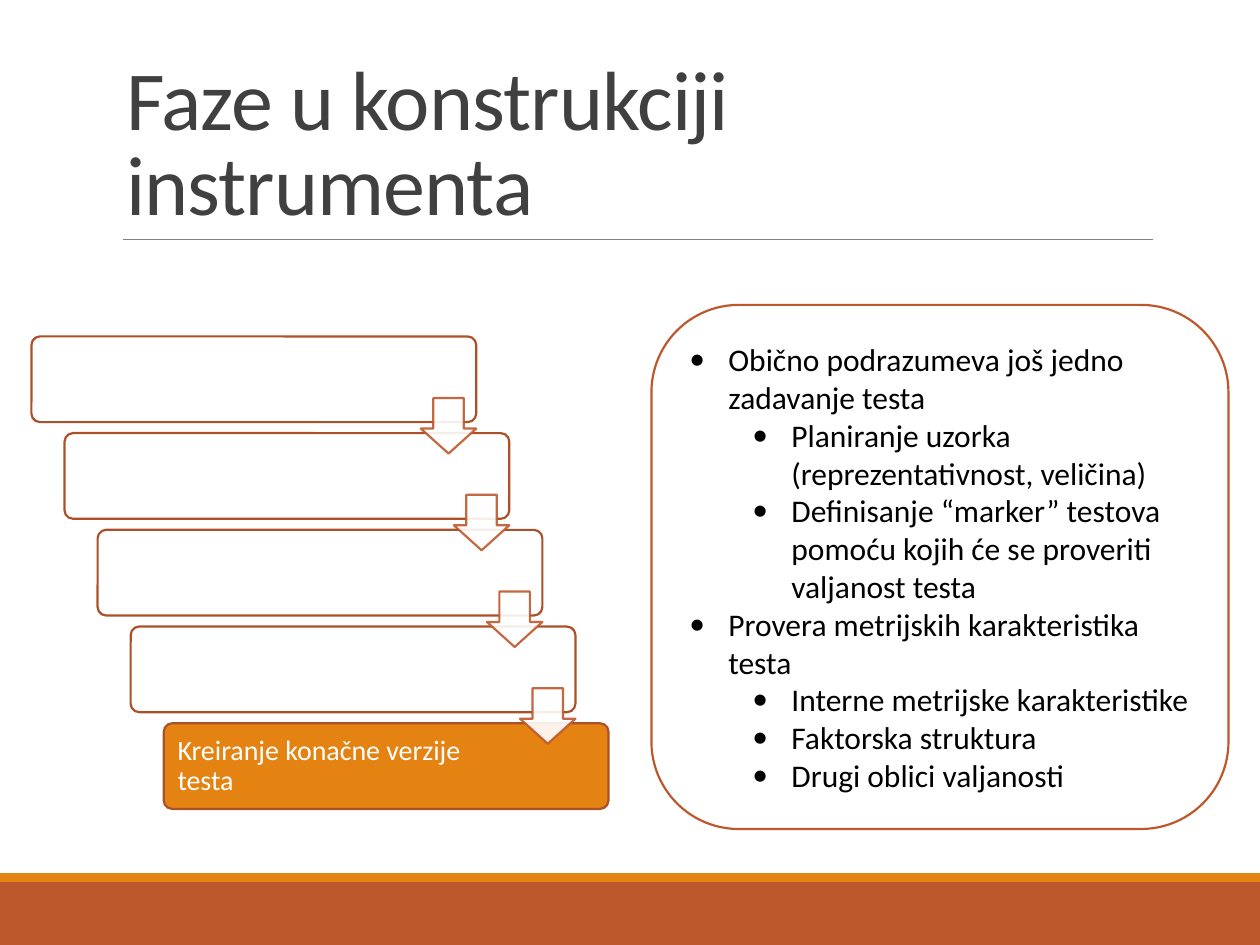
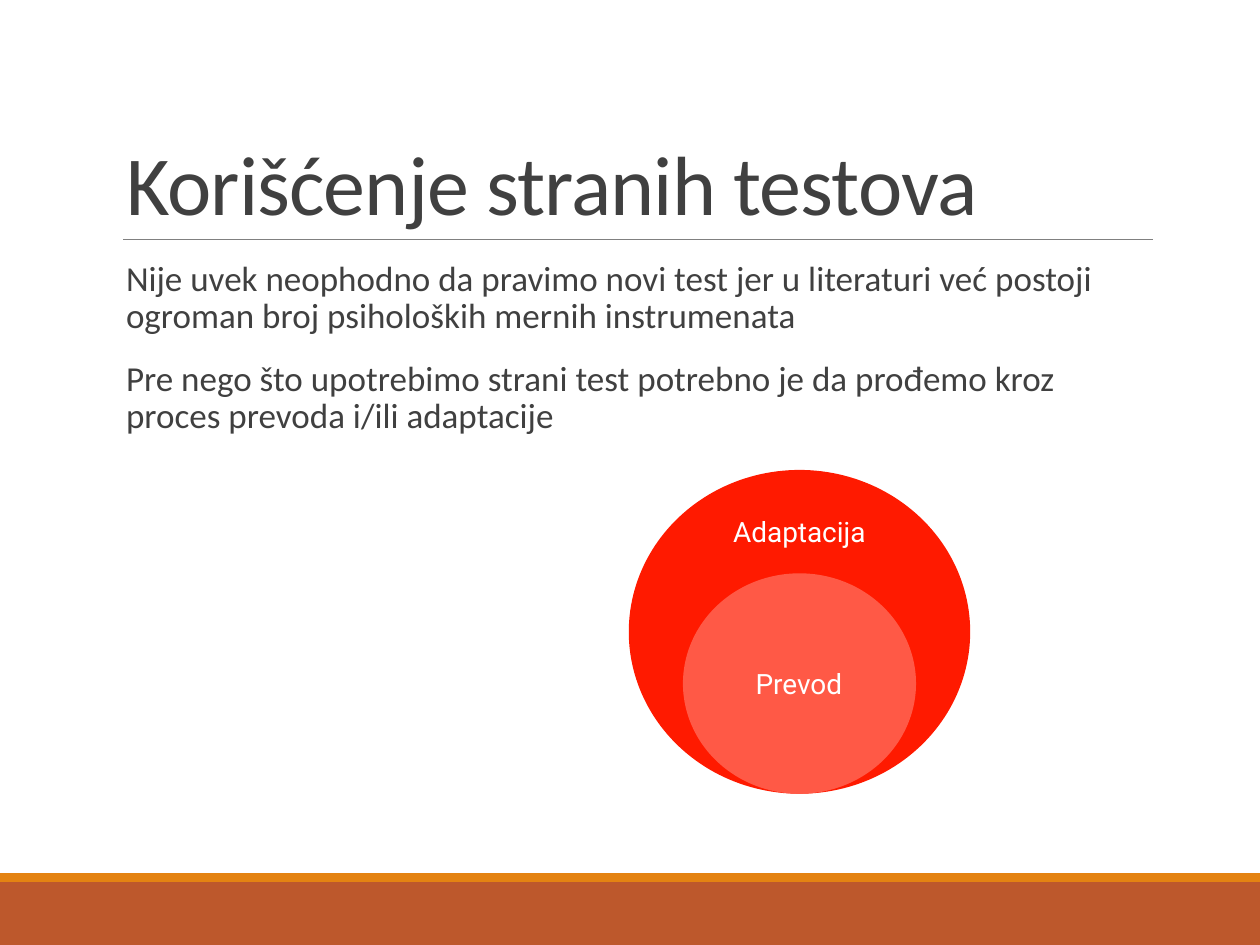
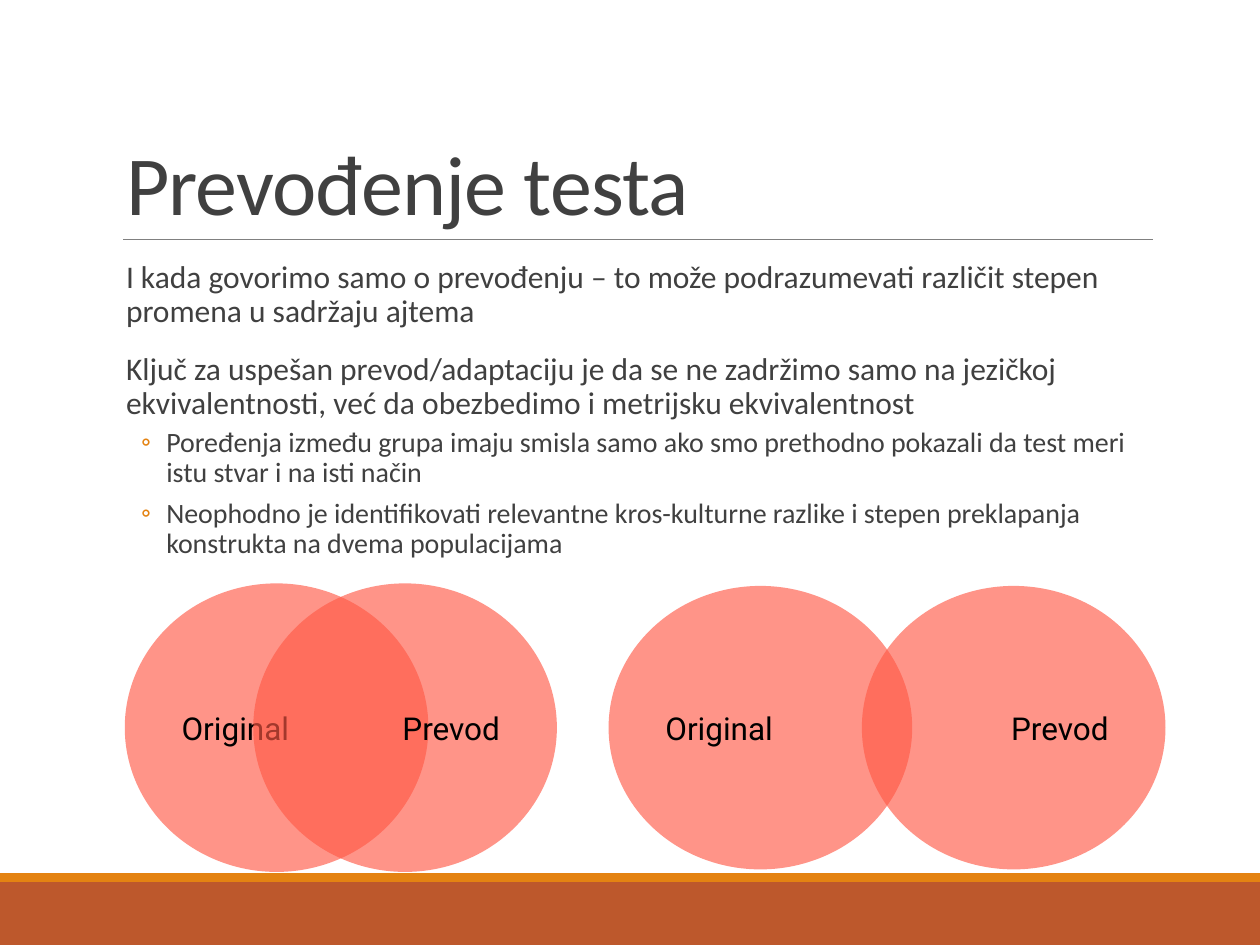
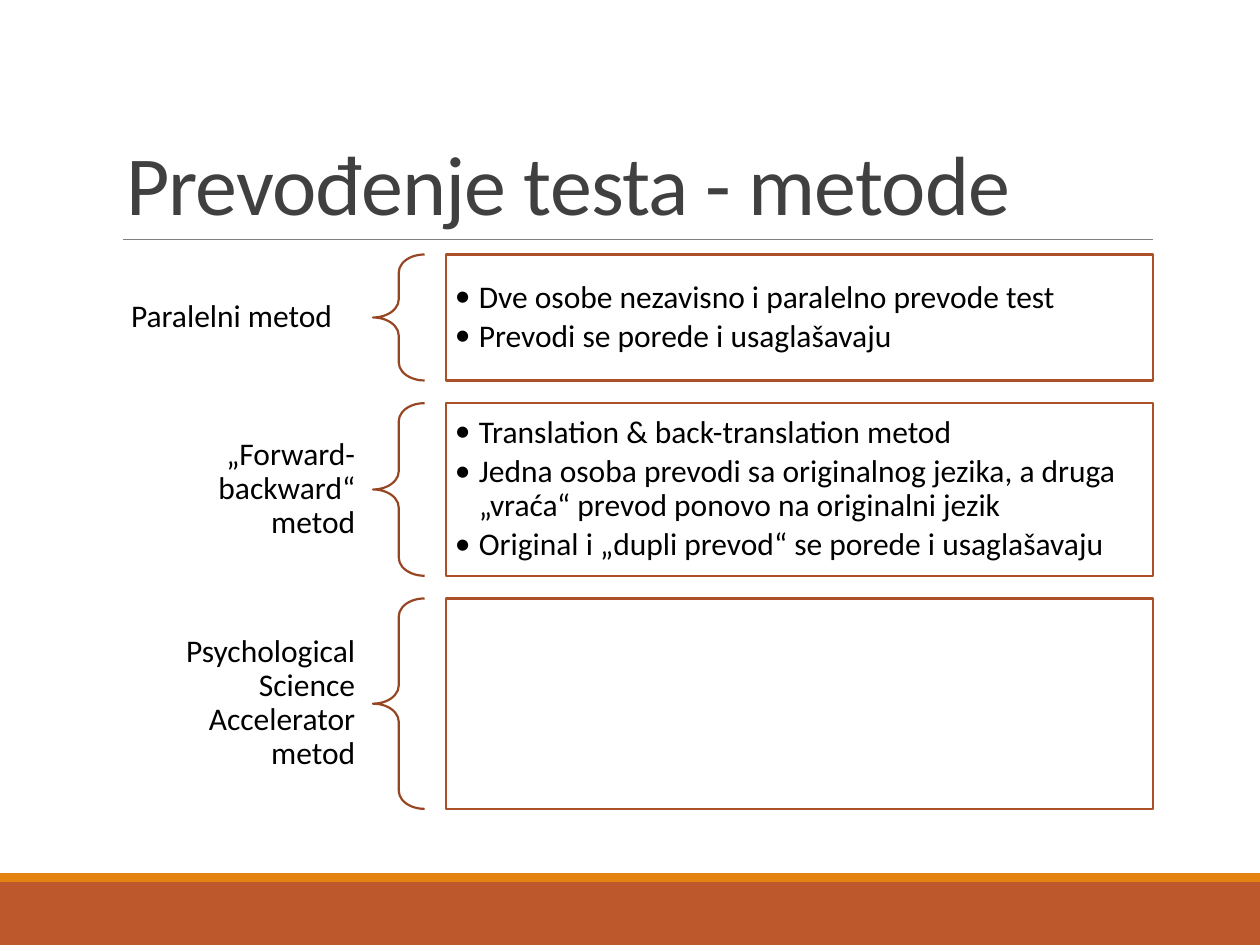
from collections import namedtuple
from dataclasses import dataclass, replace

from lxml.etree import SubElement
from pptx import Presentation
from pptx.dml.color import RGBColor
from pptx.enum.shapes import MSO_CONNECTOR as Link, MSO_SHAPE as Kind
from pptx.enum.text import MSO_ANCHOR as Anchor, MSO_AUTO_SIZE as Fit, PP_ALIGN as Align
from pptx.oxml.ns import qn
from pptx.util import Inches, Pt

COL = ROW = Inches(0.1)
WIDE, HIGH = 100, 75
HUES = {
    "rust": "BD582C",
    "orange": "E48312",
    "edge": "AC5028",
    "brace": "974623",
    "rule": "808080",
    "ink": "404040",
    "black": "000000",
    "white": "FFFFFF",
    "red": "FF1A00",
    "coral": "FF5946",
}
Box = namedtuple("Box", "x y w h")
HEAD = Box(9, 3.1, 82.5, 15.9)
BODY = Box(9, 20.2, 82.5, 44)


@dataclass
class Style:
    size: float
    color: str = "black"
    font: str = "Calibri"
    align: Align = Align.LEFT
    depth: int = 0
    left: float = 0
    hang: float = 0
    mark: str = ""
    tint: str = "black"
    lead: float = 1
    above: float = 0
    below: float = 0
    track: int = 0


TITLE = Style(48, "ink", lead=0.85, track=-50)
LEAD = Style(20, "ink", left=1, lead=0.9, above=12, below=2)
TEXT = replace(LEAD, size=18)
SUB = Style(16, "ink", depth=1, left=4.2, hang=2, mark="◦", tint="orange",
            lead=0.9, above=2, below=4)
STEP = Style(16, "white", lead=0.9)
POINT = Style(18, left=3.1, hang=3.1, mark="•")
DETAIL = replace(POINT, depth=1, left=8.1)
ITEM = Style(18, left=1.9, hang=1.9, mark="•", lead=0.9, below=3)
NAME = Style(18, align=Align.RIGHT, lead=0.9)
RING = Style(16, "white", "Roboto", Align.CENTER)
VENN = Style(18, font="Roboto")


def rgb(hue):
    return RGBColor.from_string(HUES[hue])


def emu(box):
    return (round(box.x * COL), round(box.y * ROW),
            round(box.w * COL), round(box.h * ROW))


def move(item, box):
    item.left, item.top, item.width, item.height = emu(box)


def dress(para, style):
    para.alignment = style.align
    para.level = style.depth
    para.line_spacing = style.lead
    para.space_before = Pt(style.above)
    para.space_after = Pt(style.below)
    props = para._p.get_or_add_pPr()
    props.set("marL", str(round(style.left * COL)))
    props.set("indent", str(round(-style.hang * COL)))
    if style.mark:
        color = SubElement(props, qn("a:buClr"))
        SubElement(color, qn("a:srgbClr"), val=HUES[style.tint])
        SubElement(props, qn("a:buFont"), typeface=style.font)
        SubElement(props, qn("a:buChar"), char=style.mark)
    else:
        SubElement(props, qn("a:buNone"))
    for run in para.runs:
        run.font.size = Pt(style.size)
        run.font.name = style.font
        run.font.color.rgb = rgb(style.color)
        if style.track:
            run.font._element.set("spc", str(style.track))


def write(item, lines, anchor=Anchor.MIDDLE, pads=(1, 0.5, 1, 0.5)):
    frame = item.text_frame
    frame.text = "\n".join(text for _, text in lines)
    frame.word_wrap = True
    frame.auto_size = Fit.NONE
    frame.vertical_anchor = anchor
    frame.margin_left, frame.margin_top, frame.margin_right, frame.margin_bottom = (
        round(pad * COL) for pad in pads)
    for para, (style, _) in zip(frame.paragraphs, lines):
        dress(para, style)


def label(slide, box, text, style, pads):
    write(slide.shapes.add_textbox(*emu(box)), [(style, text)], pads=pads)


def draw(slide, kind, box, fill=None, line=None, bends=(), alpha=100):
    shape = slide.shapes.add_shape(kind, *emu(box))
    shape.shadow.inherit = False
    if fill:
        shape.fill.solid()
        shape.fill.fore_color.rgb = rgb(fill)
    else:
        shape.fill.background()
    if line:
        shape.line.color.rgb = rgb(line)
        shape.line.width = Pt(1.25)
    else:
        shape.line.fill.background()
    for spot, bend in enumerate(bends):
        shape.adjustments[spot] = bend
    if alpha < 100:
        for color in shape.element.spPr.iter(qn("a:srgbClr")):
            SubElement(color, qn("a:alpha"), val=str(alpha * 1000))
    return shape


def frame_up(slide, layout):
    for holder in list(layout.placeholders)[2:]:
        holder.element.getparent().remove(holder.element)
    foot = draw(slide, Kind.RECTANGLE, Box(0, 70, WIDE, 5), "rust")
    band = draw(slide, Kind.RECTANGLE, Box(0, 69.3, WIDE, 0.7), "orange")
    rule = slide.shapes.add_connector(
        Link.STRAIGHT, round(9.8 * COL), 19 * ROW, round(91.5 * COL), 19 * ROW)
    rule.line.color.rgb = rgb("rule")
    rule.line.width = Pt(0.5)
    SubElement(rule.element.spPr, qn("a:effectLst"))
    for part in (foot, band, rule):
        layout.shapes.element.append(part.element)


def start(deck, title, lines=()):
    slide = deck.slides.add_slide(deck.slide_layouts[1])
    head, body = slide.placeholders
    move(head, HEAD)
    write(head, [(TITLE, title)], Anchor.BOTTOM)
    if lines:
        move(body, BODY)
        write(body, lines, Anchor.TOP, (0, 0.5, 0, 0.5))
    else:
        body.element.getparent().remove(body.element)
    return slide


def stairs(slide, box, texts):
    wide, high, tip = 35.3, 6.8, 4.4
    count = len(texts)
    across = (box.w - wide) / (count - 1)
    down = (box.h - high) / (count - 1)
    cells = [Box(box.x + i * across, box.y + i * down, wide, high)
             for i in range(count)]
    for cell, text in zip(cells, texts):
        step = draw(slide, Kind.ROUNDED_RECTANGLE, cell,
                    "orange" if text else "white", "edge", [0.1])
        if text:
            write(step, [(STEP, text)], pads=(0.9, 0.7, 8.1, 0.7))
    for cell in cells[:-1]:
        spot = Box(cell.x + wide - tip, cell.y + 4.9, tip, tip)
        draw(slide, Kind.DOWN_ARROW, spot, "white", "rust", [0.55, 0.45], 90)


def panel(slide, box, lines):
    card = draw(slide, Kind.ROUNDED_RECTANGLE, box, "white", "rust")
    write(card, lines)


def nest(slide, box):
    wide, high = 18.5, 17.5
    inner = Box(box.x + (box.w - wide) / 2, box.y + box.h - high, wide, high)
    rings = [
        ("Adaptacija", "red", box, Box(box.x + 6.9, box.y + 1.9, 13.3, 5.9)),
        ("Prevod", "coral", inner, Box(inner.x + 3, inner.y + 6.6, 12.4, 4.3)),
    ]
    for text, fill, ring, spot in rings:
        draw(slide, Kind.OVAL, ring, fill)
        label(slide, spot, text, RING, (1, 1, 1, 1))


def pair(slide, box):
    wide = 24.1
    sides = [("Original", box.x, Align.LEFT),
             ("Prevod", box.x + box.w - wide, Align.RIGHT)]
    for text, left, align in sides:
        disc = draw(slide, Kind.OVAL, Box(left, box.y, wide, box.h), "coral", alpha=64)
        write(disc, [(replace(VENN, align=align), text)], pads=(1, 0, 1, 0))


def method(slide, box, name, tall, align, items):
    spot = Box(box.x, box.y + (box.h - tall) / 2, 20.6, tall)
    label(slide, spot, name, replace(NAME, align=align), (1.4, 0.5, 1.4, 0.5))
    draw(slide, Kind.LEFT_BRACE, Box(box.x + 20.6, box.y, 4.1, box.h),
         line="brace", bends=[0.35, 0.5])
    card = draw(slide, Kind.RECTANGLE, Box(box.x + 26.4, box.y, box.w - 26.4, box.h),
                "white", "edge")
    if items:
        write(card, [(ITEM, item) for item in items], pads=(0.7, 0.7, 0.7, 0.7))


def phases(deck):
    slide = start(deck, "Faze u konstrukciji instrumenta")
    frame_up(slide, deck.slide_layouts[1])
    stairs(slide, Box(2.5, 26.7, 45.8, 37.5),
           ["", "", "", "", "Kreiranje konačne verzije testa"])
    panel(slide, Box(51.7, 24.2, 45.8, 41.6), [
        (POINT, "Obično podrazumeva još jedno zadavanje testa"),
        (DETAIL, "Planiranje uzorka (reprezentativnost, veličina)"),
        (DETAIL, "Definisanje “marker” testova pomoću kojih će se proveriti valjanost testa"),
        (POINT, "Provera metrijskih karakteristika testa"),
        (DETAIL, "Interne metrijske karakteristike"),
        (DETAIL, "Faktorska struktura"),
        (DETAIL, "Drugi oblici valjanosti"),
    ])


def foreign(deck):
    slide = start(deck, "Korišćenje stranih testova", [
        (LEAD, "Nije uvek neophodno da pravimo novi test jer u literaturi već postoji "
               "ogroman broj psiholoških mernih instrumenata"),
        (LEAD, "Pre nego što upotrebimo strani test potrebno je da prođemo kroz "
               "proces prevoda i/ili adaptacije"),
    ])
    nest(slide, Box(49.9, 37.3, 27.1, 25.7))


def change(deck):
    slide = start(deck, "Prevođenje testa", [
        (TEXT, "I kada govorimo samo o prevođenju – to može podrazumevati različit "
               "stepen promena u sadržaju ajtema"),
        (TEXT, "Ključ za uspešan prevod/adaptaciju je da se ne zadržimo samo na jezičkoj "
               "ekvivalentnosti, već da obezbedimo i metrijsku ekvivalentnost"),
        (SUB, "Poređenja između grupa imaju smisla samo ako smo prethodno pokazali "
              "da test meri istu stvar i na isti način"),
        (SUB, "Neophodno je identifikovati relevantne kros-kulturne razlike i stepen "
              "preklapanja konstrukta na dvema populacijama"),
    ])
    pair(slide, Box(9.9, 46.3, 34.3, 22.9))
    pair(slide, Box(48.3, 46.5, 44.2, 22.5))


def methods(deck):
    slide = start(deck, "Prevođenje testa - metode")
    rows = [
        (10, "Paralelni metod", 10, Align.LEFT,
         ["Dve osobe nezavisno i paralelno prevode test",
          "Prevodi se porede i usaglašavaju"]),
        (13.7, "„Forward-backward“ metod", 10, Align.RIGHT,
         ["Translation & back-translation metod",
          "Jedna osoba prevodi sa originalnog jezika, a druga „vraća“ prevod "
          "ponovo na originalni jezik",
          "Original i „dupli prevod“ se porede i usaglašavaju"]),
        (16.7, "Psychological Science Accelerator metod", 12.1, Align.RIGHT, []),
    ]
    gap = (BODY.h - sum(row[0] for row in rows)) / (len(rows) - 1)
    top = BODY.y
    for high, *rest in rows:
        method(slide, Box(BODY.x, top, BODY.w, high), *rest)
        top += high + gap


def main():
    deck = Presentation()
    deck.slide_width, deck.slide_height = WIDE * COL, HIGH * ROW
    for build in (phases, foreign, change, methods):
        build(deck)
    deck.save("out.pptx")


if __name__ == "__main__":
    main()
